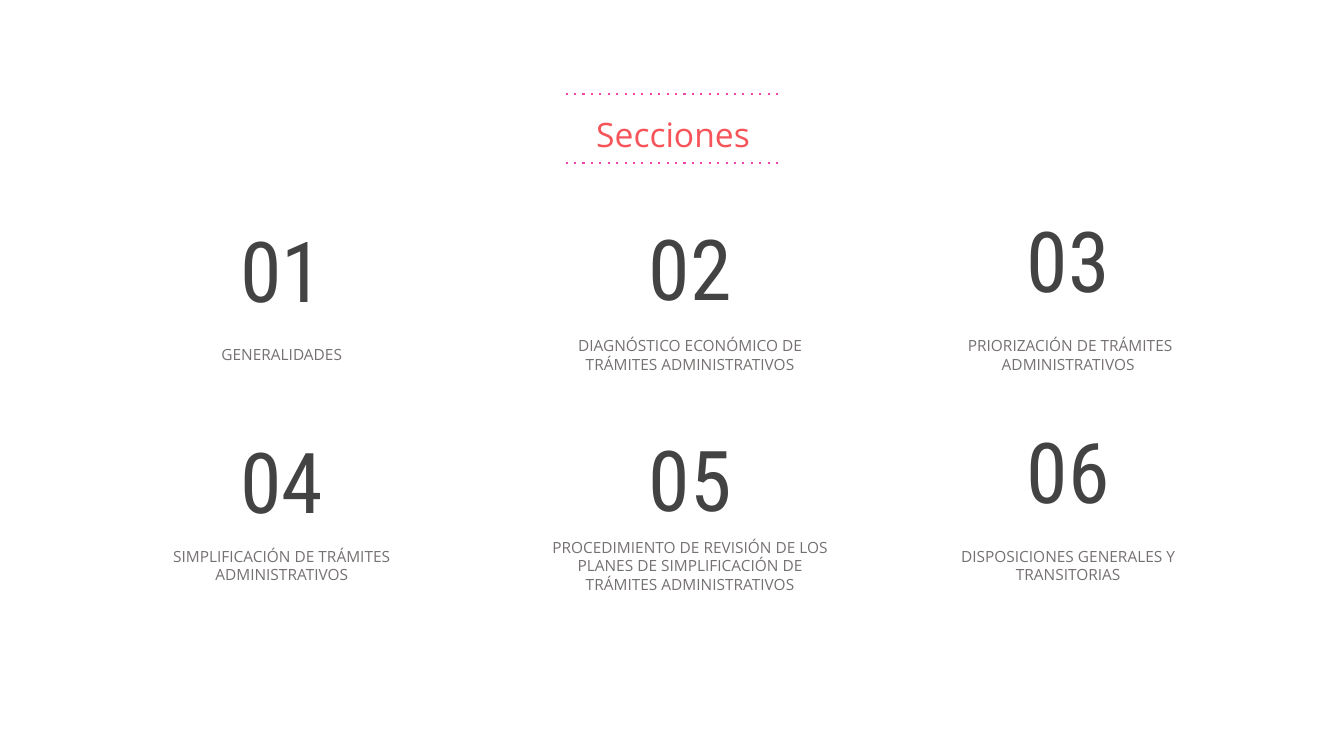
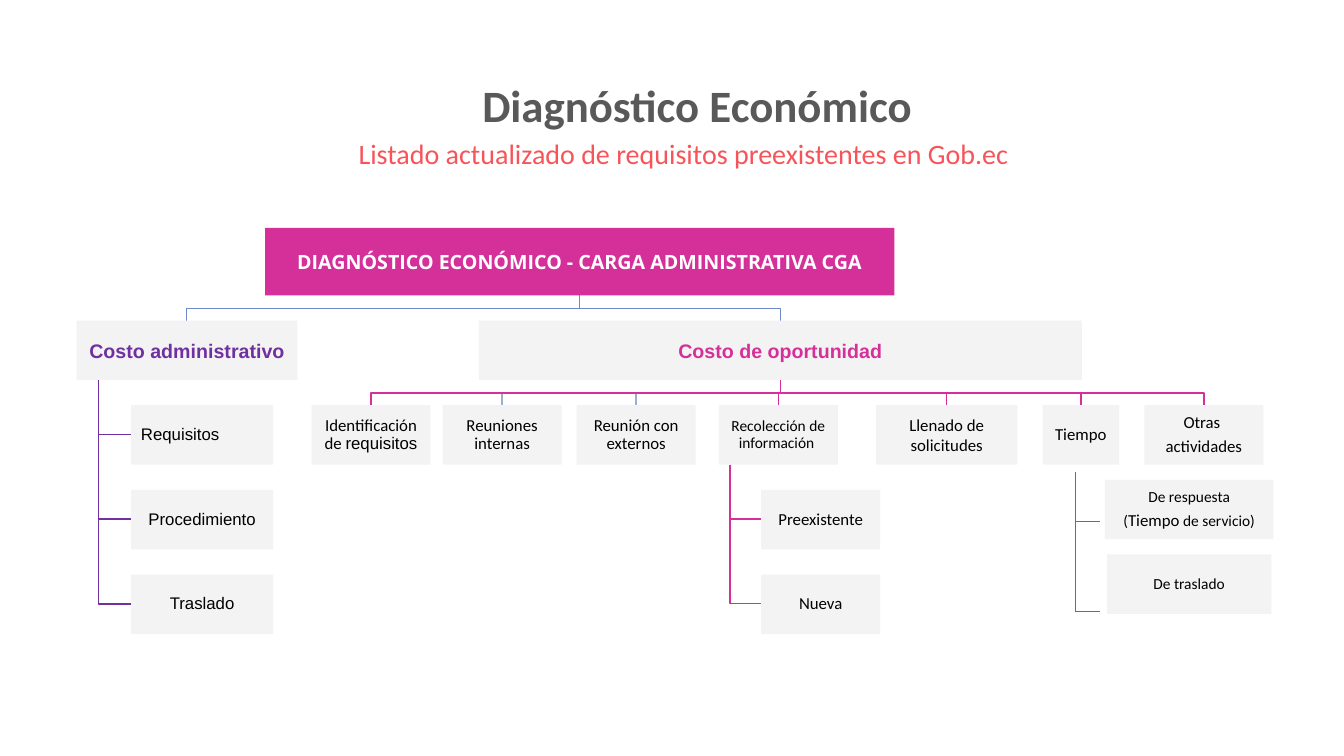
"""Build the sections slide and the economic diagnosis tree slide."""
import dataclasses
import typing

import lxml.etree
import pptx
import pptx.dml.color
import pptx.enum.shapes
import pptx.enum.text
import pptx.oxml.ns
import pptx.util

EMU_PER_PX = 9144
PINK, CORAL, DOT_PINK = "D5309A", "F75459", "F145AB"
PURPLE, BLUE, PALE_BLUE = "7030A0", "6D89CB", "9EADD8"
PANEL, WHITE, BLACK = "F3F3F3", "FFFFFF", "000000"
NUMBER_GREY, LABEL_GREY, TITLE_GREY = "434343", "767171", "595959"
ALIGN = pptx.enum.text.PP_ALIGN
ANCHOR = pptx.enum.text.MSO_ANCHOR


class Run(typing.NamedTuple):
    text: str
    font: typing.Optional[str] = None
    size: typing.Optional[int] = None


Paragraph = typing.Tuple[Run, ...]


@dataclasses.dataclass(frozen=True)
class TextStyle:
    font: str
    size: int
    colour: str
    bold: bool = False
    align: ALIGN = ALIGN.CENTER
    anchor: ANCHOR = ANCHOR.MIDDLE
    spacing: float = 1.0
    space_after: float = 0
    inset: typing.Tuple[int, int] = (10, 10)


@dataclasses.dataclass(frozen=True)
class Box:
    left: int
    top: int
    width: int
    height: int
    paragraphs: typing.Tuple[Paragraph, ...]
    style: TextStyle
    fill: typing.Optional[str] = None

    @property
    def centre(self) -> int:
        return self.left + self.width // 2

    @property
    def middle(self) -> int:
        return self.top + self.height // 2

    @property
    def bottom(self) -> int:
        return self.top + self.height


class Line(typing.NamedTuple):
    start: typing.Tuple[int, int]
    end: typing.Tuple[int, int]
    colour: str
    width: float
    dash: typing.Optional[str] = None


NUMBER = TextStyle("Roboto Condensed", 60, NUMBER_GREY, anchor=ANCHOR.BOTTOM, inset=(0, 0))
LABEL = TextStyle("Open Sans", 11, LABEL_GREY)
HEADING = TextStyle("Open Sans", 24, CORAL, anchor=ANCHOR.TOP, spacing=1.15)
TITLE = TextStyle("Calibri", 32, TITLE_GREY, bold=True, anchor=ANCHOR.TOP,
                  spacing=1.1, space_after=6, inset=(10, 5))
SUBTITLE = TextStyle("Calibri", 20, CORAL, anchor=ANCHOR.TOP, inset=(10, 5))
ROOT = TextStyle("Open Sans", 14, WHITE, bold=True)
BRANCH = TextStyle("Arial", 14, PURPLE, bold=True)
LEAF = TextStyle("Calibri", 12, BLACK, spacing=0.9, space_after=4.2)
SMALL_LEAF = dataclasses.replace(LEAF, size=11)
LOOSE_LEAF = dataclasses.replace(LEAF, spacing=1.0)
ARIAL_LEAF = dataclasses.replace(LEAF, font="Arial")

SECTION_COLUMNS = ((127, 76), (532, 78), (907, 86))
SECTION_ROWS = (317, 526)
SECTIONS = (
    "GENERALIDADES",
    "DIAGNÓSTICO ECONÓMICO DE TRÁMITES ADMINISTRATIVOS",
    " PRIORIZACIÓN DE TRÁMITES ADMINISTRATIVOS",
    "SIMPLIFICACIÓN DE TRÁMITES ADMINISTRATIVOS",
    "PROCEDIMIENTO DE REVISIÓN DE LOS PLANES DE SIMPLIFICACIÓN DE TRÁMITES ADMINISTRATIVOS",
    "DISPOSICIONES GENERALES Y TRANSITORIAS",
)
LEAF_HEIGHT = 59
LEAF_TOPS = (402, 486, 570)


def px(length: int) -> pptx.util.Emu:
    return pptx.util.Emu(length * EMU_PER_PX)


def rgb(colour: str) -> pptx.dml.color.RGBColor:
    return pptx.dml.color.RGBColor.from_string(colour)


def plain(*texts: str) -> typing.Tuple[Paragraph, ...]:
    return tuple((Run(text),) for text in texts)


def panel(left: int, top: int, width: int, paragraphs: typing.Tuple[Paragraph, ...],
          style: TextStyle = LEAF) -> Box:
    return Box(left, top, width, LEAF_HEIGHT, paragraphs, style, PANEL)


def write_text(shape, box: Box) -> None:
    style, frame = box.style, shape.text_frame
    frame.word_wrap = True
    frame.vertical_anchor = style.anchor
    frame.margin_left = frame.margin_right = px(style.inset[0])
    frame.margin_top = frame.margin_bottom = px(style.inset[1])
    for index, runs in enumerate(box.paragraphs):
        paragraph = frame.add_paragraph() if index else frame.paragraphs[0]
        paragraph.alignment = style.align
        paragraph.line_spacing = style.spacing
        paragraph.space_after = pptx.util.Pt(style.space_after)
        paragraph.font.name = style.font
        paragraph.font.size = pptx.util.Pt(style.size)
        paragraph.font.bold = style.bold
        paragraph.font.color.rgb = rgb(style.colour)
        for part in runs:
            run = paragraph.add_run()
            run.text = part.text
            if part.font:
                run.font.name = part.font
            if part.size:
                run.font.size = pptx.util.Pt(part.size)


def draw_box(slide, box: Box) -> None:
    bounds = [px(length) for length in (box.left, box.top, box.width, box.height)]
    if box.fill:
        shape = slide.shapes.add_shape(pptx.enum.shapes.MSO_SHAPE.RECTANGLE, *bounds)
        shape.shadow.inherit = False
        shape.fill.solid()
        shape.fill.fore_color.rgb = rgb(box.fill)
        shape.line.fill.background()
    else:
        shape = slide.shapes.add_textbox(*bounds)
    write_text(shape, box)


def draw_line(slide, line: Line) -> None:
    ends = [px(length) for length in (*line.start, *line.end)]
    connector = slide.shapes.add_connector(pptx.enum.shapes.MSO_CONNECTOR.STRAIGHT, *ends)
    connector.line.color.rgb = rgb(line.colour)
    connector.line.width = pptx.util.Pt(line.width)
    qn = pptx.oxml.ns.qn
    properties = connector._element.spPr
    if line.dash:
        outline = properties.find(qn("a:ln"))
        lxml.etree.SubElement(outline, qn("a:prstDash")).set("val", line.dash)
    lxml.etree.SubElement(properties, qn("a:effectLst"))


def draw_polyline(slide, points: typing.Sequence[typing.Tuple[int, int]], colour: str) -> None:
    start, *rest = [(px(x), px(y)) for x, y in points]
    builder = slide.shapes.build_freeform(*start)
    builder.add_line_segments(rest, close=False)
    shape = builder.convert_to_shape()
    shape.shadow.inherit = False
    shape.fill.background()
    shape.line.color.rgb = rgb(colour)
    shape.line.width = pptx.util.Pt(1)


def link_below(slide, parent: Box, child: Box, colour: str) -> None:
    turn = (parent.bottom + child.top + 1) // 2
    points = ((parent.centre, parent.bottom), (parent.centre, turn),
              (child.centre, turn), (child.centre, child.top))
    draw_polyline(slide, points, colour)


def link_beside(slide, parent: Box, child: Box, spine: int, colour: str) -> None:
    points = ((spine, parent.bottom), (spine, child.middle), (child.left, child.middle))
    draw_polyline(slide, points, colour)


def build_sections(slide) -> None:
    for index, text in enumerate(SECTIONS):
        row, column = divmod(index, len(SECTION_COLUMNS))
        left, rise = SECTION_COLUMNS[column]
        top = SECTION_ROWS[row]
        draw_box(slide, Box(left + 30, top - rise, 245, 76, plain(f"{index + 1:02}"), NUMBER))
        draw_box(slide, Box(left, top, 305, 70, plain(text), LABEL))
    draw_box(slide, Box(297, 97, 741, 43, plain("Secciones"), HEADING))
    for y in (93, 162):
        draw_line(slide, Line((561, y), (774, y), DOT_PINK, 1.5, "dot"))


def build_diagnosis(slide) -> None:
    draw_box(slide, Box(333, 67, 727, 66, plain("Diagnóstico Económico "), TITLE))
    subtitle = "Listado actualizado de requisitos preexistentes en Gob.ec"
    draw_box(slide, Box(271, 131, 814, 44, plain(subtitle), SUBTITLE))

    root = Box(263, 226, 624, 67,
               plain("DIAGNÓSTICO ECONÓMICO - CARGA ADMINISTRATIVA CGA"), ROOT, PINK)
    administrative = panel(76, 318, 219, plain("Costo administrativo"), BRANCH)
    opportunity = panel(475, 318, 598, plain("Costo de oportunidad"),
                        dataclasses.replace(BRANCH, colour=PINK))
    administrative_styles = (dataclasses.replace(ARIAL_LEAF, align=ALIGN.LEFT),
                             ARIAL_LEAF, ARIAL_LEAF)
    administrative_leaves = [
        panel(130, top, 141, plain(text), style)
        for text, top, style in zip(("Requisitos", "Procedimiento", "Traslado"),
                                    LEAF_TOPS, administrative_styles)]
    first = LEAF_TOPS[0]
    collection = panel(713, first, 118, plain("Recolección de información "), SMALL_LEAF)
    activities = (
        (panel(309, first, 118, ((Run("Identificación de "), Run("requisitos", "Arial")),)), PINK),
        (panel(439, first, 118, plain("Reuniones internas")), PALE_BLUE),
        (panel(572, first, 118, plain("Reunión con externos")), PALE_BLUE),
        (collection, PINK),
        (panel(869, first, 140, plain("Llenado de solicitudes"), LOOSE_LEAF), PINK),
        (panel(1034, first, 76, plain("Tiempo")), PINK),
        (panel(1135, first, 118, plain("Otras ", "actividades")), PINK),
    )
    collection_leaves = [panel(755, top, 118, plain(text))
                         for text, top in zip(("Preexistente", "Nueva"), LEAF_TOPS[1:])]
    service_time = (Run("("), Run("Tiempo", size=12), Run(" de servicio)"))
    time_leaves = [
        panel(1098, 550, 163, plain("De traslado"), SMALL_LEAF),
        panel(1096, 476, 167, (*plain("De respuesta"), service_time), SMALL_LEAF),
    ]

    for activity, colour in reversed(activities):
        link_below(slide, opportunity, activity, colour)
    for branch in (opportunity, administrative):
        link_below(slide, root, branch, BLUE)
    for parent, leaves, spine, colour in (
            (collection, collection_leaves, 724, PINK),
            (administrative, administrative_leaves, 98, PURPLE)):
        for leaf in reversed(leaves):
            link_beside(slide, parent, leaf, spine, colour)

    for box in (root, administrative, opportunity, *administrative_leaves,
                *(activity for activity, _ in activities), *collection_leaves, *time_leaves):
        draw_box(slide, box)
    for start, end in (((1067, 468), (1067, 607)),
                       ((1067, 607), (1091, 607)),
                       ((1067, 517), (1091, 517))):
        draw_line(slide, Line(start, end, PINK, 0.5))


def main() -> None:
    presentation = pptx.Presentation()
    presentation.slide_width, presentation.slide_height = px(1333), px(750)
    blank = presentation.slide_layouts[6]
    for build in (build_sections, build_diagnosis):
        build(presentation.slides.add_slide(blank))
    presentation.save("out.pptx")


if __name__ == "__main__":
    main()
